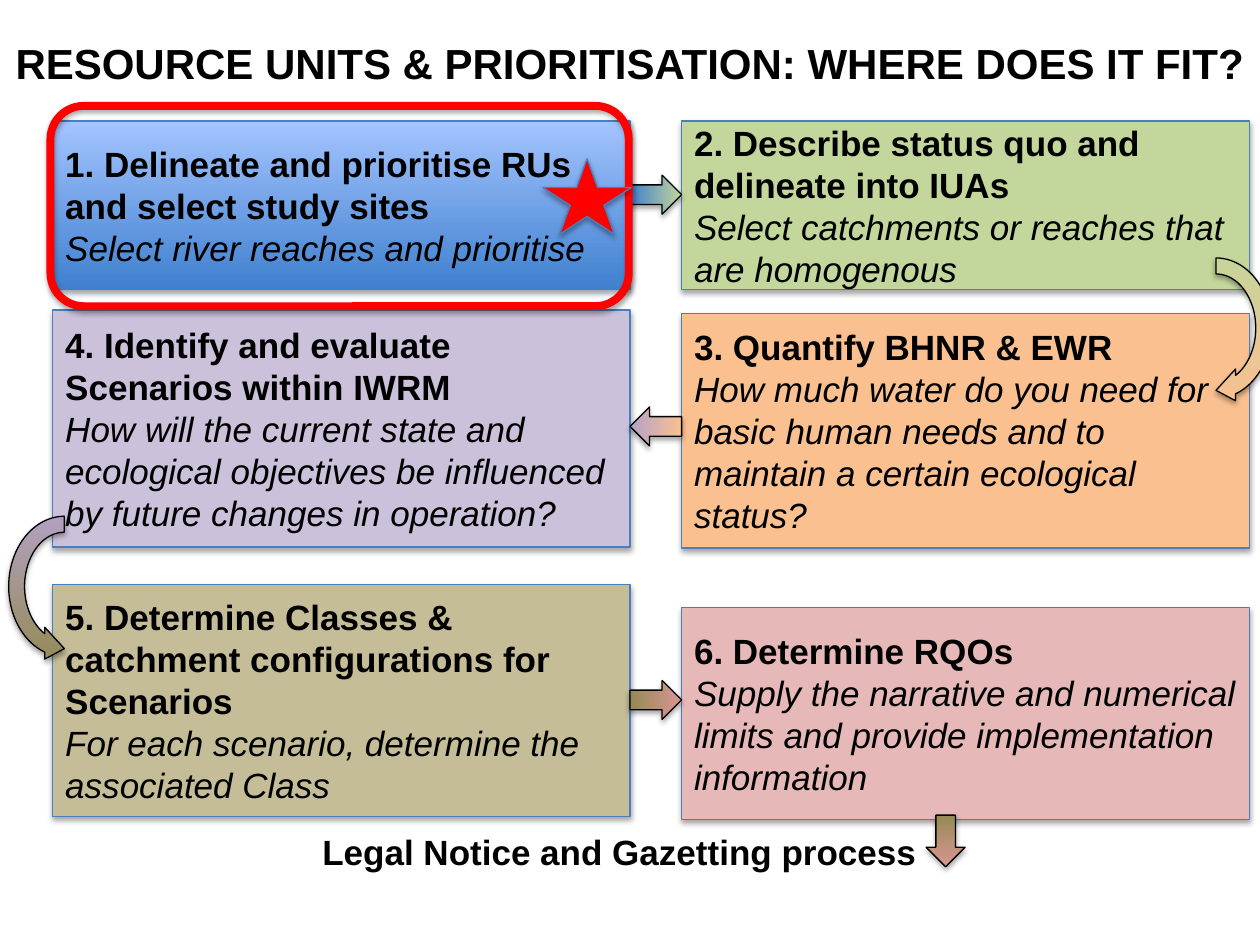
import pptx
import pptx.util
import pptx.dml.color
import pptx.enum.shapes
import pptx.enum.text
import lxml.etree

Pt = pptx.util.Pt
SHAPE = pptx.enum.shapes.MSO_SHAPE
ANCHOR = pptx.enum.text.MSO_ANCHOR
ALIGN = pptx.enum.text.PP_ALIGN
FIT = pptx.enum.text.MSO_AUTO_SIZE
NS = "http://schemas.openxmlformats.org/drawingml/2006/main"

COLOURS = {
    "white": "FFFFFF", "black": "000000", "red": "FF0000", "border": "4B7EBC",
    "blue": "3F80CE", "sky": "A4C4FF", "green": "C3D69B", "orange": "FAC090",
    "lilac": "CCC1DA", "purple": "B3A2C7", "sand": "C4BD97", "olive": "948A54",
    "pink": "E6B9B8", "rose": "D99694",
}

# Column left and width, then each step: column, top, height, fill, heading, note
COLUMNS = [(0, 329.8), (359.3, 324.7)]
STEPS = [
    (0, 0, 96.5, ("blue", "sky"), " Delineate and prioritise RUs and select study sites",
     "Select river reaches and prioritise"),
    (1, 0, 96.5, "green", "2. Describe status quo and delineate into IUAs",
     "Select catchments or reaches that are homogenous"),
    (1, 110.2, 133.9, "orange", "3. Quantify BHNR & EWR",
     "How much water do you need for basic human needs and to maintain a certain ecological status?"),
    (0, 108, 135.4, "lilac", "4. Identify and evaluate Scenarios within IWRM",
     "How will the current state and ecological objectives be influenced by future changes in operation?"),
    (0, 265, 132.5, "sand", "5. Determine Classes & catchment configurations for Scenarios",
     "For each scenario, determine the associated Class"),
    (1, 278, 121, "pink", "6. Determine RQOs",
     "Supply the narrative and numerical limits and provide implementation information"),
]

# Left and top inside the flow box, rotation, gradient colours
STRAIGHT_ARROWS = [
    (329.8, 31, 0, ("blue", "green")),
    (329.8, 163.4, 180, ("orange", "purple")),
    (329.8, 319.7, 0, ("olive", "rose")),
    (495.4, 400.3, 90, ("olive", "rose")),
]
CURVED_ARROWS = [
    (620, 82.1, 90, ("green", "orange"), False),
    (-38.1, 229.7, 270, ("purple", "olive"), True),
]


def colour(name):
    return pptx.dml.color.RGBColor.from_string(COLOURS[name])


def write(para, text, size=20, bold=False, italic=False, align=None):
    para.alignment = align
    span = para.add_run()
    span.text = text
    font = span.font
    font.name, font.size, font.bold, font.italic = "Arial", Pt(size), bold, italic
    font.color.rgb = colour("black")


def number(para):
    properties = para._p.get_or_add_pPr()
    properties.set("marL", "0")
    properties.set("indent", "0")
    lxml.etree.SubElement(properties, f"{{{NS}}}buAutoNum", type="arabicPeriod")


def add_shadow(shape):
    shape.shadow.inherit = False
    effects = shape._element.spPr.find(f"{{{NS}}}effectLst")
    shadow = lxml.etree.SubElement(
        effects, f"{{{NS}}}outerShdw", blurRad=str(Pt(3.1)), dist=str(Pt(1.8)),
        dir="5400000", rotWithShape="0")
    tint = lxml.etree.SubElement(shadow, f"{{{NS}}}srgbClr", val=COLOURS["black"])
    lxml.etree.SubElement(tint, f"{{{NS}}}alpha", val="35000")


def add_shape(page, kind, box, fill=None, line="border", width=0.75, angle=0, rotation=0):
    shape = page.shapes.add_shape(kind, *[Pt(length) for length in box])
    shape.rotation = rotation
    if fill is None:
        shape.fill.background()
    elif isinstance(fill, tuple):
        shape.fill.gradient()
        shape.fill.gradient_angle = angle
        for stop, name in zip(shape.fill.gradient_stops, fill):
            stop.color.rgb = colour(name)
    else:
        shape.fill.solid()
        shape.fill.fore_color.rgb = colour(fill)
    shape.line.color.rgb = colour(line)
    shape.line.width = Pt(width)
    add_shadow(shape)
    return shape


def place_title(page, box):
    title = page.shapes.title
    title.left, title.top, title.width, title.height = [Pt(length) for length in box]
    title.fill.solid()
    title.fill.fore_color.rgb = colour("white")
    frame = title.text_frame
    frame.word_wrap = True
    frame.auto_size = FIT.SHAPE_TO_FIT_TEXT
    frame.vertical_anchor = ANCHOR.TOP
    write(frame.paragraphs[0], "RESOURCE UNITS & PRIORITISATION: WHERE DOES IT FIT?",
          size=24, bold=True, align=ALIGN.CENTER)


def place_steps(page, box):
    left, top = box[:2]
    for index, (column, offset, height, fill, heading, note) in enumerate(STEPS):
        start, width = COLUMNS[column]
        step = add_shape(page, SHAPE.RECTANGLE, (left + start, top + offset, width, height),
                         fill, angle=90)
        frame = step.text_frame
        frame.word_wrap = True
        frame.vertical_anchor = ANCHOR.MIDDLE
        if index == 0:
            number(frame.paragraphs[0])
        write(frame.paragraphs[0], heading, bold=True, align=ALIGN.LEFT)
        write(frame.add_paragraph(), note, italic=True, align=ALIGN.LEFT)


def place_arrows(page, box):
    left, top = box[:2]
    for x, y, rotation, fill in STRAIGHT_ARROWS:
        add_shape(page, SHAPE.RIGHT_ARROW, (left + x, top + y, 29.5, 22.3), fill,
                  line="black", rotation=rotation)
    for x, y, rotation, fill, flipped in CURVED_ARROWS:
        arrow = add_shape(page, SHAPE.CIRCULAR_ARROW, (left + x, top + y, 89.3, 72.7), fill,
                          line="black", rotation=rotation)
        if flipped:
            arrow._element.spPr.xfrm.set("flipH", "1")


def place_highlight(page, box):
    left, top = box[:2]
    add_shape(page, SHAPE.ROUNDED_RECTANGLE, box, line="red", width=4.5)
    add_shape(page, SHAPE.STAR_5_POINT, (left + 281.5, top + 30.2, 50.4, 43.2), "red")


def place_outcome(page, box):
    frame = page.shapes.add_textbox(*[Pt(length) for length in box]).text_frame
    frame.word_wrap = True
    frame.auto_size = FIT.SHAPE_TO_FIT_TEXT
    write(frame.paragraphs[0], "Legal Notice and Gazetting process", bold=True)


def main():
    deck = pptx.Presentation()
    deck.slide_width, deck.slide_height = Pt(720), Pt(540)
    page = deck.slides.add_slide(deck.slide_layouts[5])
    flow = (30.2, 69.1, 684, 399)
    place_title(page, (0, 18, 720, 36))
    place_steps(page, flow)
    place_arrows(page, flow)
    place_highlight(page, (28.8, 60.5, 330.5, 114.5))
    place_outcome(page, (177.1, 470.9, 362.9, 31.5))
    deck.save("out.pptx")


if __name__ == "__main__":
    main()
